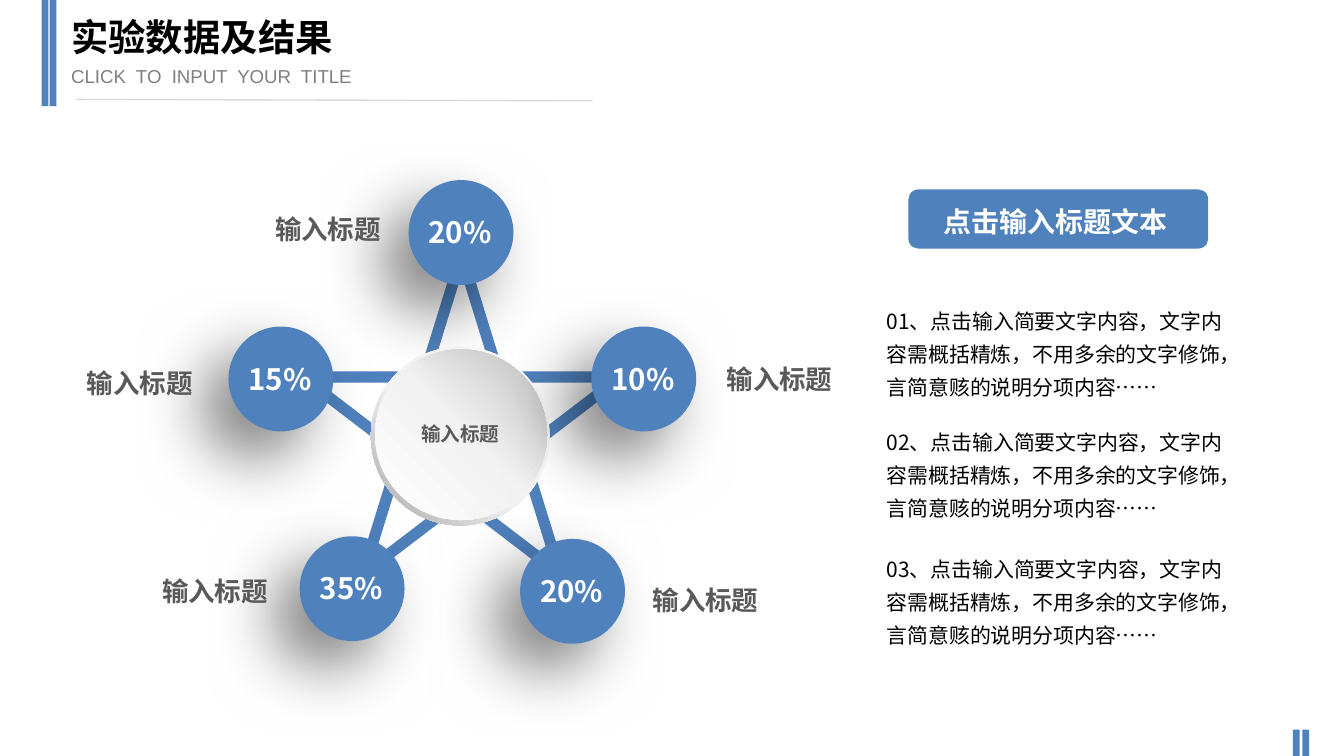
import lxml.etree
import pptx
import pptx.dml.color
import pptx.enum.shapes
import pptx.enum.text
import pptx.oxml.ns
import pptx.util

PX = 9144  # 100 px to the inch
BLUE, GREY, WHITE, BLACK = "4F81BD", "595959", "FFFFFF", "000000"
SANS = "Noto Sans CJK SC"
KIND = pptx.enum.shapes.MSO_SHAPE
ALIGN = pptx.enum.text.PP_ALIGN
ANCHOR = pptx.enum.text.MSO_ANCHOR
DISC = 78
# disc left and top, share, label left and top
POINTS = [
    (170, 243, "15%", 54, 268),
    (304, 134, "20%", 194, 153),
    (440, 243, "10%", 530, 265),
    (387, 401, "20%", 475, 429),
    (223, 399, "35%", 110, 423),
]
NOTE = "、点击输入简要文字内容，文字内容需概括精炼，不用多余的文字修饰，言简意赅的说明分项内容……"


def color(code):
    return pptx.dml.color.RGBColor.from_string(code)


def node(parent, tag, **attrs):
    """Add a DrawingML child element."""
    name = pptx.oxml.ns.qn("a:" + tag)
    return lxml.etree.SubElement(parent, name, {k: str(v) for k, v in attrs.items()})


def place(item, box):
    item.left, item.top, item.width, item.height = (n * PX for n in box)


def shape(slide, kind, box, fill=None):
    item = slide.shapes.add_shape(kind, *(n * PX for n in box))
    item.shadow.inherit = False
    item.line.fill.background()
    if fill:
        item.fill.solid()
        item.fill.fore_color.rgb = color(fill)
    else:
        item.fill.background()
    return item


def shade(item, stops, angle):
    """Give a shape a linear gradient; stops are (percent, hex)."""
    props = item._element.spPr
    fill = props.find(pptx.oxml.ns.qn("a:noFill"))
    grad = node(props, "gradFill", rotWithShape=1)
    props.replace(fill, grad)
    row = node(grad, "gsLst")
    for pos, code in stops:
        node(node(row, "gs", pos=pos * 1000), "srgbClr", val=code)
    node(grad, "lin", ang=angle * 60000, scaled=0)


def shadow(item):
    """Cast a soft black shadow down to the left."""
    effects = item._element.spPr.find(pptx.oxml.ns.qn("a:effectLst"))
    outer = node(effects, "outerShdw", blurRad=35 * 12700, dist=20 * 12700,
                 dir=135 * 60000, algn="tr", rotWithShape=0)
    tint = node(outer, "srgbClr", val=BLACK)
    node(tint, "alpha", val=50000)


def write(item, text, size, code, bold=False, font=SANS, align=ALIGN.CENTER,
          anchor=ANCHOR.MIDDLE):
    frame = item.text_frame
    frame.text = text
    frame.word_wrap = True
    frame.auto_size = pptx.enum.text.MSO_AUTO_SIZE.NONE
    frame.vertical_anchor = anchor
    para = frame.paragraphs[0]
    para.alignment = align
    face = para.runs[0].font
    face.size, face.bold, face.name = pptx.util.Pt(size), bold, font
    face.color.rgb = color(code)
    node(face._element, "ea", typeface=font)
    return frame


def label(slide, box, text, size, code, inset=0):
    item = slide.shapes.add_textbox(*(n * PX for n in box))
    frame = write(item, text, size, code, True)
    frame.margin_left = frame.margin_right = inset * PX
    frame.margin_top = frame.margin_bottom = 0
    return frame


def header(slide):
    for left in (31, 37):
        shape(slide, KIND.RECTANGLE, (left, 0, 5, 79), BLUE)
    for left in (962, 969):
        shape(slide, KIND.RECTANGLE, (left, 543, 5, 20), BLUE)
    rule = slide.shapes.add_connector(
        pptx.enum.shapes.MSO_CONNECTOR.STRAIGHT, 57 * PX, 74 * PX, 441 * PX, 75 * PX)
    rule.line.color.rgb = color("D8D8D8")
    rule.line.width = pptx.util.Pt(0.75)
    node(rule._element.spPr, "effectLst")
    title, body = slide.placeholders
    place(title, (43, 6, 404, 50))
    frame = write(title, "实验数据及结果", 20, BLACK, True, "Arial", ALIGN.LEFT)
    frame.margin_bottom = 13 * PX
    place(body, (43, 43, 315, 27))
    write(body, "CLICK  TO  INPUT  YOUR  TITLE", 10, "7F7F7F", False, "Arial", ALIGN.LEFT)


def star(slide):
    arms = shape(slide, KIND.STAR_5_POINT, (225, 190, 237, 237))
    arms.line.color.rgb = color(BLUE)
    arms.line.width = pptx.util.Pt(6)
    ring = shape(slide, KIND.DONUT, (276, 258, 133, 133))
    ring.adjustments[0] = 0.05
    shade(ring, [(0, WHITE), (55, "F2F2F2"), (100, "A6A6A6")], 135)
    core = shape(slide, KIND.OVAL, (279, 260, 128, 127))
    shade(core, [(0, WHITE), (51, "F2F2F2"), (100, "BFBFBF")], 315)
    label(slide, (303, 309, 79, 28), "输入标题", 10.5, GREY)
    for left, top, *_ in POINTS:
        shadow(shape(slide, KIND.OVAL, (left, top, DISC, DISC), BLUE))
    for left, top, share, x, y in POINTS:
        label(slide, (x, y, 100, 34), "输入标题", 14.2, GREY, 10).word_wrap = False
        label(slide, (left + 2, top + 25, 73, 27), share, 15.8, WHITE)


def notes(slide):
    shape(slide, KIND.ROUNDED_RECTANGLE, (676, 141, 223, 44), BLUE)
    label(slide, (676, 152, 219, 25), "点击输入标题文本", 15, WHITE)
    for num, top in enumerate((219, 309, 403), 1):
        item = slide.shapes.add_textbox(650 * PX, top * PX, 276 * PX, 84 * PX)
        frame = write(item, f"{num:02}{NOTE}", 11.2, BLACK,
                      align=ALIGN.LEFT, anchor=ANCHOR.TOP)
        frame.margin_right = 14 * PX
        frame.paragraphs[0].line_spacing = pptx.util.Pt(17.7)


def main():
    deck = pptx.Presentation()
    deck.slide_width = 1000 * PX
    deck.slide_height = pptx.util.Inches(5.625)
    slide = deck.slides.add_slide(deck.slide_layouts[2])
    header(slide)
    star(slide)
    notes(slide)
    deck.save("out.pptx")


if __name__ == "__main__":
    main()
